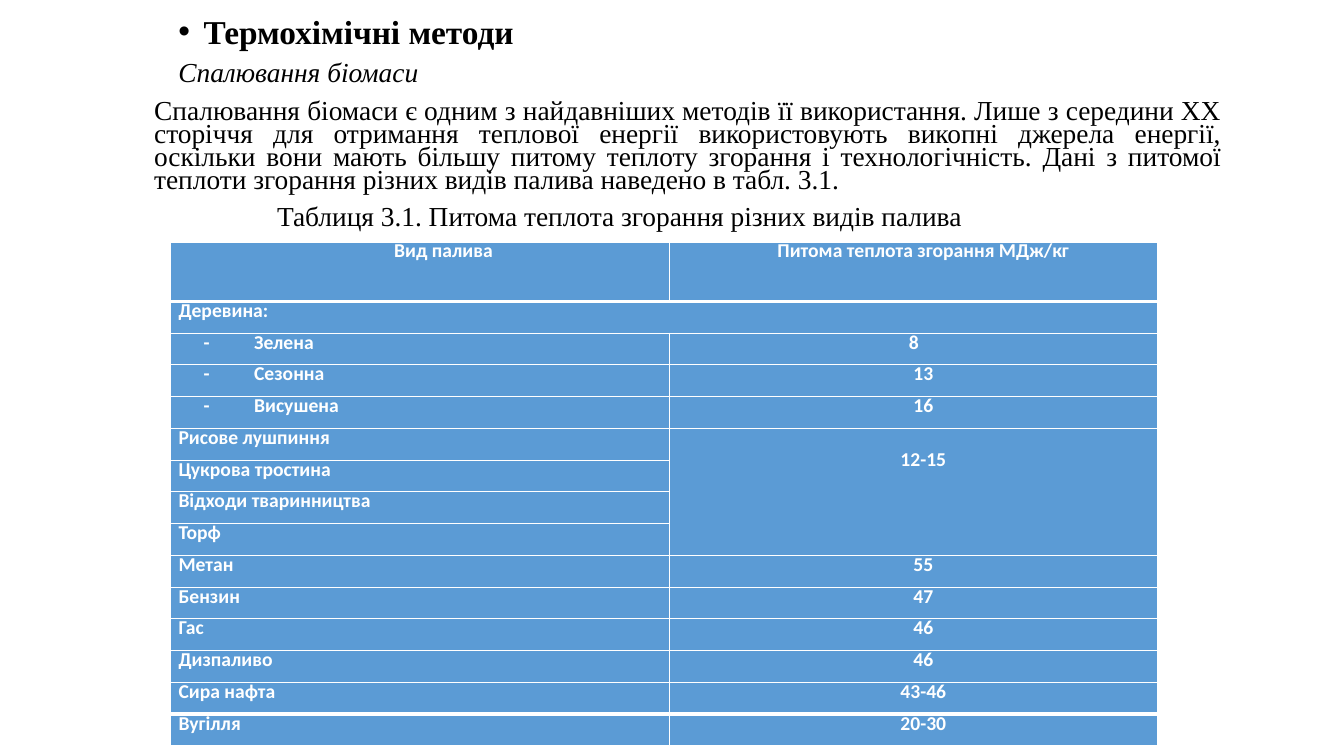
from pptx import Presentation
from pptx import util as u
from pptx.dml import color
from pptx.enum import text
from pptx.oxml import xmlchemy
from lxml import etree

Pt = u.Pt
CENTER, JUSTIFY, LEFT = text.PP_ALIGN.CENTER, text.PP_ALIGN.JUSTIFY, text.PP_ALIGN.LEFT
DRAWING = "http://schemas.openxmlformats.org/drawingml/2006/main"

INTRO = [
    ("Термохімічні методи",
     dict(size=23.8, bold=True, bullet="•", indent=72, hanging=-18, spacing=Pt(15.9), before=3.6)),
    ("Спалювання біомаси",
     dict(size=19.6, italic=True, indent=54, spacing=Pt(15.9), before=10)),
    ("Спалювання біомаси є одним з найдавніших методів її використання. "
     "Лише з середини ХХ сторіччя для отримання теплової енергії використовують "
     "викопні джерела енергії, оскільки вони мають більшу питому теплоту згорання "
     "і технологічність. Дані з питомої теплоти згорання різних видів палива "
     "наведено в табл. 3.1.",
     dict(size=19.6, indent=36.7, right=14.4, spacing=0.7, before=10)),
    ("Таблиця 3.1. Питома теплота згорання різних видів палива",
     dict(size=19.6, align=LEFT, indent=124.5, spacing=0.7, before=10)),
]

FUELS = [
    ("Вид палива", "Питома теплота згорання МДж/кг"),
    ("Деревина:", ""),
    ("-\tЗелена", "8"),
    ("-\tСезонна", "13"),
    ("-\tВисушена", "16"),
    ("Рисове лушпиння", "12-15"),
    ("Цукрова тростина", ""),
    ("Відходи тваринництва", ""),
    ("Торф", ""),
    ("Метан", "55"),
    ("Бензин", "47"),
    ("Гас", "46"),
    ("Дизпаливо", "46"),
    ("Сира нафта", "43-46"),
    ("Вугілля", "20-30"),
]


def rgb(value):
    return color.RGBColor.from_string(value)


def add_node(parent, tag, **attributes):
    values = {name: str(value) for name, value in attributes.items()}
    return etree.SubElement(parent, f"{{{DRAWING}}}{tag}", values)


def write(para, content, font, ink, size, bold=False, italic=False, align=JUSTIFY,
          indent=0, hanging=0, right=0, spacing=1.0, before=0, bullet=None, tab=None):
    para.alignment = align
    para.line_spacing = spacing
    para.space_before = Pt(before)
    para.space_after = Pt(0)
    layout = para._p.get_or_add_pPr()
    for name, length in (("marL", indent), ("marR", right), ("indent", hanging)):
        layout.set(name, str(int(Pt(length))))
    if bullet:
        add_node(layout, "buChar", char=bullet)
    else:
        add_node(layout, "buNone")
    if tab:
        add_node(add_node(layout, "tabLst"), "tab", pos=int(Pt(tab)), algn="l")
    span = para.add_run()
    span.text = content
    span.font.name = font
    span.font.size = Pt(size)
    span.font.bold = bold
    span.font.italic = italic
    span.font.color.rgb = rgb(ink)


class FuelPage:
    serif, sans = "Times New Roman", "Calibri"
    black, white, blue = "000000", "FFFFFF", "5B9BD5"

    def __init__(self, deck):
        self.page = deck.slides.add_slide(deck.slide_layouts[1])
        title = self.page.shapes.title
        title.element.getparent().remove(title.element)

    def add_body(self, paragraphs, left, top, width, height):
        box = self.page.placeholders[1]
        box.left, box.top, box.width, box.height = map(Pt, (left, top, width, height))
        frame = box.text_frame
        frame.auto_size = text.MSO_AUTO_SIZE.NONE
        frame.vertical_anchor = text.MSO_ANCHOR.TOP
        for index, (content, style) in enumerate(paragraphs):
            para = frame.add_paragraph() if index else frame.paragraphs[0]
            write(para, content, self.serif, self.black, **style)

    def add_borders(self, cell, **widths):
        properties = cell._tc.get_or_add_tcPr()
        for position, side in enumerate(("left", "right", "top", "bottom")):
            line = add_node(properties, "ln" + side[0].upper(), w=int(Pt(widths.get(side, 1))))
            add_node(add_node(line, "solidFill"), "srgbClr", val=self.white)
            properties.insert(position, line)

    def add_table(self, rows, left, top, widths, header_height, row_height):
        height = header_height + row_height * (len(rows) - 1)
        frame = self.page.shapes.add_table(
            len(rows), len(widths), Pt(left), Pt(top), Pt(sum(widths)), Pt(height))
        table = frame.table
        table.first_row = table.horz_banding = False
        for column, width in zip(table.columns, widths):
            column.width = Pt(width)
        for index, row in enumerate(table.rows):
            row.height = Pt(row_height if index else header_height)
            for number, cell in enumerate(row.cells):
                self.fill_cell(cell, rows[index][number], index, number, len(rows) - 1)
        return table

    def fill_cell(self, cell, content, row, column, last):
        cell.margin_left = cell.margin_right = cell.margin_top = cell.margin_bottom = 0
        cell.fill.solid()
        cell.fill.fore_color.rgb = rgb(self.blue)
        self.add_borders(cell, bottom=1 if row else 3, top=3 if row in (1, last) else 1)
        if not content:
            return
        style = dict(align=LEFT, indent=5.8)
        if column:
            style = dict(align=CENTER, indent=0.7 if row == 2 else 14.4)
        elif row == 0:
            style = dict(align=CENTER, indent=33.8)
        elif "\t" in content:
            style = dict(align=LEFT, indent=23.8, tab=41)
        write(cell.text_frame.paragraphs[0], content, self.sans, self.white,
              size=14, bold=True, spacing=Pt(15.1), **style)


def main():
    deck = Presentation()
    deck.slide_width, deck.slide_height = Pt(960), Pt(540)
    page = FuelPage(deck)
    page.add_body(INTRO, 66.2, 17.3, 828, 162)
    table = page.add_table(FUELS, 121.7, 172.8, (356.4, 348.5), 42.5, 22.68)
    table.cell(1, 0).merge(table.cell(1, 1))
    shared_value = table.cell(5, 1)
    shared_value.merge(table.cell(8, 1))
    shared_value.margin_top = Pt(15.6)
    deck.save("out.pptx")


if __name__ == "__main__":
    main()
